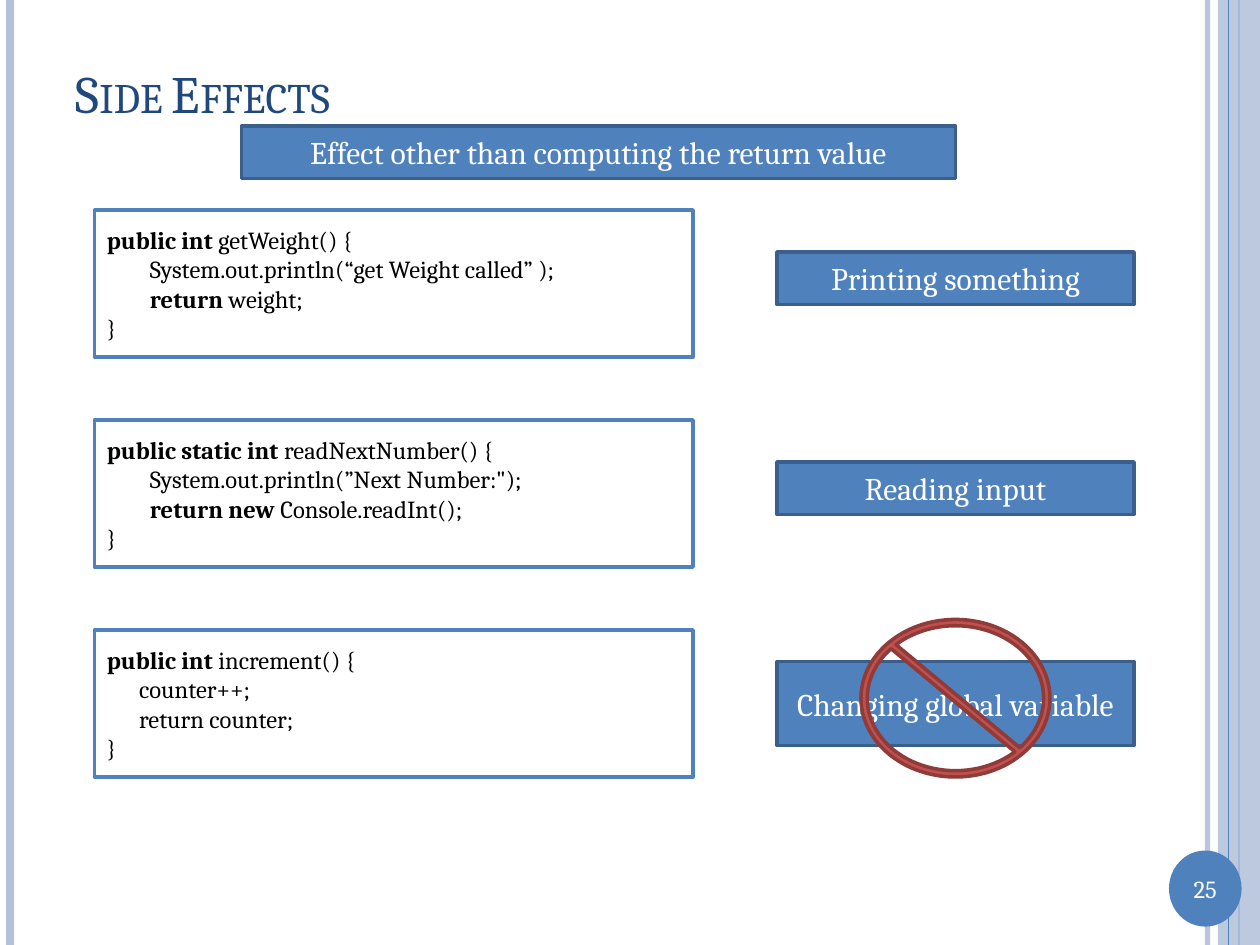
from dataclasses import dataclass

from lxml import etree
from pptx import Presentation
from pptx.dml.color import RGBColor
from pptx.enum import shapes as kinds, text as txt
from pptx.oxml.ns import qn
from pptx.util import Pt


@dataclass(frozen=True)
class Theme:
    font: str = "Cambria"
    white: str = "FFFFFF"
    black: str = "000000"
    navy: str = "1F497D"
    blue: str = "4F81BD"
    blue_edge: str = "3A5F8C"
    pale: str = "B3C1DB"
    red: str = "C0504D"
    red_edge: str = "8E3B39"
    title_size: float = 30
    label_size: float = 18
    code_size: float = 14
    edge: float = 2


@dataclass(frozen=True)
class Box:
    left: float
    top: float
    width: float
    height: float

    def lengths(self) -> tuple:
        return Pt(self.left), Pt(self.top), Pt(self.width), Pt(self.height)


@dataclass(frozen=True)
class CodeLine:
    keyword: str = ""
    rest: str = ""
    indent: float = 0


@dataclass(frozen=True)
class Example:
    code: tuple
    effect: str
    effect_height: float = 30


@dataclass(frozen=True)
class Rule:
    x: float
    width: float
    color: str
    opacity: int = 100


THEME = Theme()
DEEP, SHALLOW = 24.6, 18.4
CODE_TOP, CODE_STEP, CODE_HEIGHT = 120, 120, 84
SLIDE_WIDTH, SLIDE_HEIGHT = 720, 540

EXAMPLES = (
    Example((CodeLine("public int ", "getWeight() {"),
             CodeLine(rest="System.out.println(“get Weight called” );", indent=DEEP),
             CodeLine("return", " weight;", DEEP),
             CodeLine(rest="}")), "Printing something"),
    Example((CodeLine("public static int", " readNextNumber() {"),
             CodeLine(rest="System.out.println(”Next Number:\");", indent=DEEP),
             CodeLine("return new", " Console.readInt();", DEEP),
             CodeLine(rest="}")), "Reading input"),
    Example((CodeLine("public int", " increment() {"),
             CodeLine(rest="counter++;", indent=SHALLOW),
             CodeLine(rest="return counter;", indent=SHALLOW),
             CodeLine(rest="}")), "Changing global variable", 48),
)


def rgb(color: str) -> RGBColor:
    return RGBColor.from_string(color)


def set_opacity(fill, percent: int) -> None:
    if percent < 100:
        color = fill._xPr.find(qn("a:solidFill"))[0]
        etree.SubElement(color, qn("a:alpha")).set("val", str(percent * 1000))


def style_font(font, size: float, color: str, bold: bool = False) -> None:
    font.name, font.size, font.bold = THEME.font, Pt(size), bold
    font.color.rgb = rgb(color)


def add_rule(slide, rule: Rule) -> None:
    line = slide.shapes.add_connector(
        kinds.MSO_CONNECTOR.STRAIGHT, Pt(rule.x), Pt(0), Pt(rule.x), Pt(SLIDE_HEIGHT))
    line.line.width = Pt(rule.width)
    line.line.color.rgb = rgb(rule.color)
    set_opacity(line.line.fill, rule.opacity)
    etree.SubElement(line._element.spPr, qn("a:effectLst"))


def add_figure(slide, kind, box: Box, fill: str, edge: str = "", opacity: int = 100):
    figure = slide.shapes.add_shape(kind, *box.lengths())
    figure.shadow.inherit = False
    figure.fill.solid()
    figure.fill.fore_color.rgb = rgb(fill)
    set_opacity(figure.fill, opacity)
    if edge:
        figure.line.color.rgb = rgb(edge)
        figure.line.width = Pt(THEME.edge)
    else:
        figure.line.fill.background()
    return figure


def write_centred(frame, words: str, size: float) -> None:
    frame.text = words
    frame.word_wrap = True
    frame.vertical_anchor = txt.MSO_ANCHOR.MIDDLE
    paragraph = frame.paragraphs[0]
    paragraph.alignment = txt.PP_ALIGN.CENTER
    style_font(paragraph.runs[0].font, size, THEME.white)


def add_label(slide, box: Box, words: str) -> None:
    label = add_figure(slide, kinds.MSO_SHAPE.RECTANGLE, box, THEME.blue, THEME.blue_edge)
    write_centred(label.text_frame, words, THEME.label_size)


def add_code(slide, box: Box, lines: tuple) -> None:
    frame = add_figure(slide, kinds.MSO_SHAPE.RECTANGLE, box, THEME.white, THEME.blue).text_frame
    frame.vertical_anchor = txt.MSO_ANCHOR.MIDDLE
    for index, line in enumerate(lines):
        paragraph = frame.add_paragraph() if index else frame.paragraphs[0]
        paragraph.alignment = txt.PP_ALIGN.LEFT
        paragraph._p.get_or_add_pPr().set("marL", str(Pt(line.indent)))
        for words, bold in ((line.keyword, True), (line.rest, False)):
            if words:
                run = paragraph.add_run()
                run.text = words
                style_font(run.font, THEME.code_size, THEME.black, bold)


def add_side_bands(slide) -> None:
    for rule in (Rule(690, 3, THEME.pale, 93), Rule(5.75, 4.5, THEME.pale),
                 Rule(708, 1.5, THEME.blue)):
        add_rule(slide, rule)
    band_left = 696
    add_figure(slide, kinds.MSO_SHAPE.RECTANGLE,
               Box(band_left, 0, SLIDE_WIDTH - band_left, SLIDE_HEIGHT), THEME.pale, opacity=87)
    add_rule(slide, Rule(702, 0.75, THEME.blue))


def add_page_number(slide, number: str) -> None:
    add_figure(slide, kinds.MSO_SHAPE.OVAL, Box(668, 486, 41.5, 43.5), THEME.blue)
    page = slide.shapes.add_textbox(*Box(668, 495.5, 41.5, 24.5).lengths())
    write_centred(page.text_frame, number, THEME.code_size)


def set_title(slide, words: str) -> None:
    title = slide.shapes.title
    title.left, title.top, title.width, title.height = Box(36, 21.6, 660, 62.4).lengths()
    frame = title.text_frame
    frame.text = words
    frame.auto_size = txt.MSO_AUTO_SIZE.NONE
    frame.vertical_anchor = txt.MSO_ANCHOR.MIDDLE
    paragraph = frame.paragraphs[0]
    paragraph.alignment = txt.PP_ALIGN.LEFT
    font = paragraph.runs[0].font
    style_font(font, THEME.title_size, THEME.navy)
    font._element.set("cap", "small")


def main() -> None:
    deck = Presentation()
    deck.slide_width, deck.slide_height = Pt(SLIDE_WIDTH), Pt(SLIDE_HEIGHT)
    slide = deck.slides.add_slide(deck.slide_layouts[5])

    # Frame of the page
    add_side_bands(slide)
    add_page_number(slide, "25")
    set_title(slide, "Side Effects")

    # Definition, then each example with its effect centred beside it
    add_label(slide, Box(138, 72, 408, 30), "Effect other than computing the return value")
    for index, example in enumerate(EXAMPLES):
        top = CODE_TOP + index * CODE_STEP
        add_code(slide, Box(54, top, 342, CODE_HEIGHT), example.code)
        effect_top = top + (CODE_HEIGHT - example.effect_height) / 2
        # Single-line effects sit slightly above the middle
        if example.effect_height == 30:
            effect_top -= 3
        add_label(slide, Box(444, effect_top, 204, example.effect_height), example.effect)

    # Ban on changing global variables
    ban = add_figure(slide, kinds.MSO_SHAPE.NO_SYMBOL, Box(492, 354, 108, 90),
                     THEME.red, THEME.red_edge)
    ban.adjustments[0] = 0.04

    deck.save("out.pptx")


if __name__ == "__main__":
    main()
